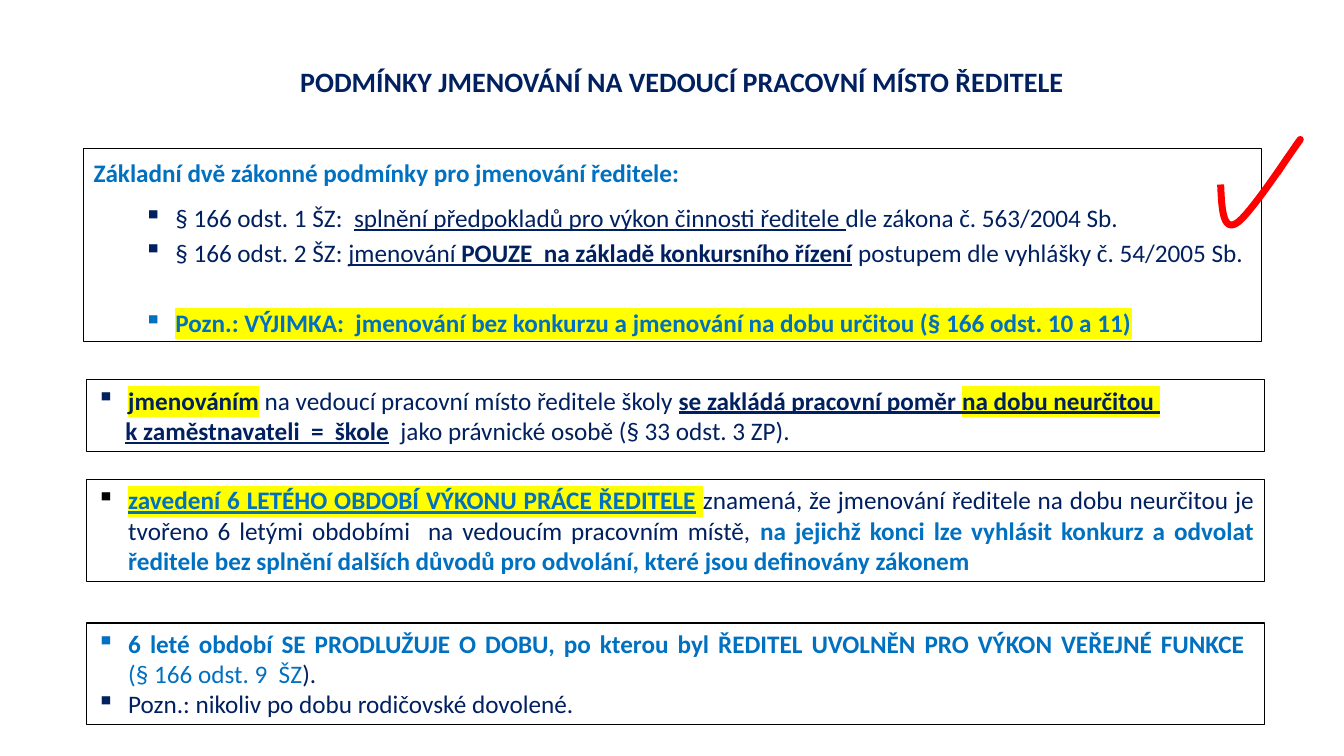
"""Build the slide on the conditions for appointing a school head."""
import pptx
import pptx.util
import pptx.dml.color
import pptx.enum.shapes
import pptx.enum.text
import lxml.etree

Pt = pptx.util.Pt
Align = pptx.enum.text.PP_ALIGN
THEME = {"font": "Calibri", "title": 20, "body": 18, "navy": "002060", "blue": "0070C0",
         "mark": "FFFF00", "black": "000000", "white": "FFFFFF", "red": "FF0000"}

TITLE = "PODMÍNKY JMENOVÁNÍ NA VEDOUCÍ PRACOVNÍ MÍSTO ŘEDITELE"
BLUE = {"tone": "blue", "bold": True}
BOLD = {"bold": True}
LINE = {"under": True}
BOTH = {"bold": True, "under": True}
MARK = {"mark": True}
DEEP = {"left": 58.3, "hang": 22.5, "space": 1.15}
LIST = {"left": 22.5, "hang": 22.5}

BOXES = [
    {"at": (59.8, 105.8, 841, 138.2), "paras": [
        ({"space": 1.15}, [("Základní dvě zákonné podmínky pro jmenování ředitele:", BLUE)]),
        ({**DEEP, "before": 7}, [
            ("§ 166 odst. 1 ŠZ:  ", {}),
            ("splnění předpokladů pro výkon činnosti ředitele ", LINE),
            ("dle zákona č. 563/2004 Sb.", {})]),
        (DEEP, [
            ("§ 166 odst. 2 ŠZ: ", {}),
            ("jmenování ", LINE),
            ("POUZE  na základě konkursního řízení", BOTH),
            (" postupem dle vyhlášky č. 54/2005 Sb.", {})]),
        ({**DEEP, "before": 25.3}, [
            ("Pozn.: VÝJIMKA:  jmenování bez konkurzu a jmenování na dobu určitou "
             "(§ 166 odst. 10 a 11)", {**BLUE, **MARK})])]},
    {"at": (62, 271.4, 841, 51.1), "paras": [
        (LIST, [
            ("jmenováním", {**BOLD, **MARK}),
            (" na vedoucí pracovní místo ředitele školy ", {}),
            ("se zakládá pracovní poměr ", BOTH),
            ("na dobu neurčitou ", {**BOTH, **MARK})]),
        ({"left": 20.5}, [
            ("k zaměstnavateli  =  škole", BOTH),
            ("  jako právnické osobě (§ 33 odst. 3 ZP).", {})])]},
    {"at": (62, 342.7, 841, 72.7), "paras": [
        ({**LIST, "dot": "black"}, [
            ("zavedení 6 LETÉHO OBDOBÍ VÝKONU PRÁCE ŘEDITELE", {**BLUE, **LINE, **MARK}),
            (" ", {**BLUE, **MARK}),
            ("znamená, že jmenování ředitele na dobu neurčitou je tvořeno 6 letými obdobími  "
             "na vedoucím pracovním místě, ", {}),
            ("na jejichž konci lze vyhlásit konkurz a odvolat ředitele bez splnění dalších "
             "důvodů pro odvolání, které jsou definovány zákonem", BLUE)])]},
    {"at": (62, 445, 841, 72.7), "fill": "white", "paras": [
        (LIST, [
            ("6 leté období SE PRODLUŽUJE O DOBU, po kterou byl ŘEDITEL UVOLNĚN PRO VÝKON "
             "VEŘEJNÉ FUNKCE \n", BLUE),
            ("(§ 166 odst. 9  ŠZ", {"tone": "blue"}),
            (").", {})]),
        (LIST, [("Pozn.: nikoliv po dobu rodičovské dovolené.", {})])]},
]

START = (871.9, 131.8)
CURVES = [((872.6, 148.3), (873.4, 164.9), (882.7, 159.8)),
          ((892.1, 154.8), (921.6, 109.4), (927.4, 101.5)),
          ((933.1, 93.6), (919.4, 113), (919.4, 113))]
TAIL = (912.2, 123.8)
STEPS = 16


def tint(name):
    return pptx.dml.color.RGBColor.from_string(THEME[name])


def add(node, tag, **attrs):
    return lxml.etree.SubElement(node, pptx.oxml.ns.qn(tag), attrs)


def write(para, text, size="body", tone="navy", bold=False, under=False, mark=False):
    for count, piece in enumerate(text.split("\n")):
        if count:
            para.add_line_break()
        if not piece:
            continue
        run = para.add_run()
        run.text = piece
        font = run.font
        font.size, font.bold, font.underline = Pt(THEME[size]), bold, under
        font.color.rgb = tint(tone)
        if mark:
            add(add(run._r.get_or_add_rPr(), "a:highlight"), "a:srgbClr", val=THEME["mark"])
        font.name = THEME["font"]


def style(para, left=0, hang=0, space=1, before=0, dot=None):
    para.alignment = Align.JUSTIFY
    para.line_spacing = float(space)
    if before:
        para.space_before = Pt(before)
    props = para._p.get_or_add_pPr()
    props.set("marL", str(Pt(left)))
    props.set("indent", str(-Pt(hang)))
    if dot:
        add(add(props, "a:buClr"), "a:srgbClr", val=THEME[dot])
    if hang:
        add(props, "a:buChar", char="▪")


def frame(slide, at, paras, fill=None):
    box = slide.shapes.add_shape(pptx.enum.shapes.MSO_SHAPE.RECTANGLE, *map(Pt, at))
    box.shadow.inherit = False
    box.line.color.rgb, box.line.width = tint("black"), Pt(0.75)
    if fill:
        box.fill.solid()
        box.fill.fore_color.rgb = tint(fill)
    else:
        box.fill.background()
    body = box.text_frame
    body.word_wrap = True
    body.vertical_anchor = pptx.enum.text.MSO_ANCHOR.TOP
    for count, (form, runs) in enumerate(paras):
        para = body.add_paragraph() if count else body.paragraphs[0]
        style(para, **form)
        for text, look in runs:
            write(para, text, **look)


def bend(nodes, part):
    rest = 1 - part
    parts = (rest ** 3, 3 * rest ** 2 * part, 3 * rest * part ** 2, part ** 3)
    return tuple(sum(w * n[axis] for w, n in zip(parts, nodes)) for axis in (0, 1))


def tick(slide):
    dots = [START]
    for curve in CURVES:
        nodes = (dots[-1], *curve)
        dots += [bend(nodes, step / STEPS) for step in range(1, STEPS + 1)]
    dots.append(TAIL)
    pen = slide.shapes.build_freeform(Pt(START[0]), Pt(START[1]))
    pen.add_line_segments([(Pt(x), Pt(y)) for x, y in dots[1:]], close=False)
    mark = pen.convert_to_shape()
    mark.shadow.inherit = False
    mark.fill.background()
    mark.line.color.rgb, mark.line.width = tint("red"), Pt(5)


def main():
    deck = pptx.Presentation()
    deck.slide_width, deck.slide_height = Pt(960), Pt(540)
    slide = deck.slides.add_slide(deck.slide_layouts[6])
    head = slide.shapes.add_textbox(Pt(62), Pt(32.4), Pt(850.3), Pt(54.7)).text_frame
    head.word_wrap = True
    head.vertical_anchor = pptx.enum.text.MSO_ANCHOR.MIDDLE
    para = head.paragraphs[0]
    para.alignment, para.line_spacing = Align.CENTER, 0.9
    write(para, TITLE, size="title", bold=True)
    for box in BOXES:
        frame(slide, **box)
    tick(slide)
    deck.save("out.pptx")


if __name__ == "__main__":
    main()
